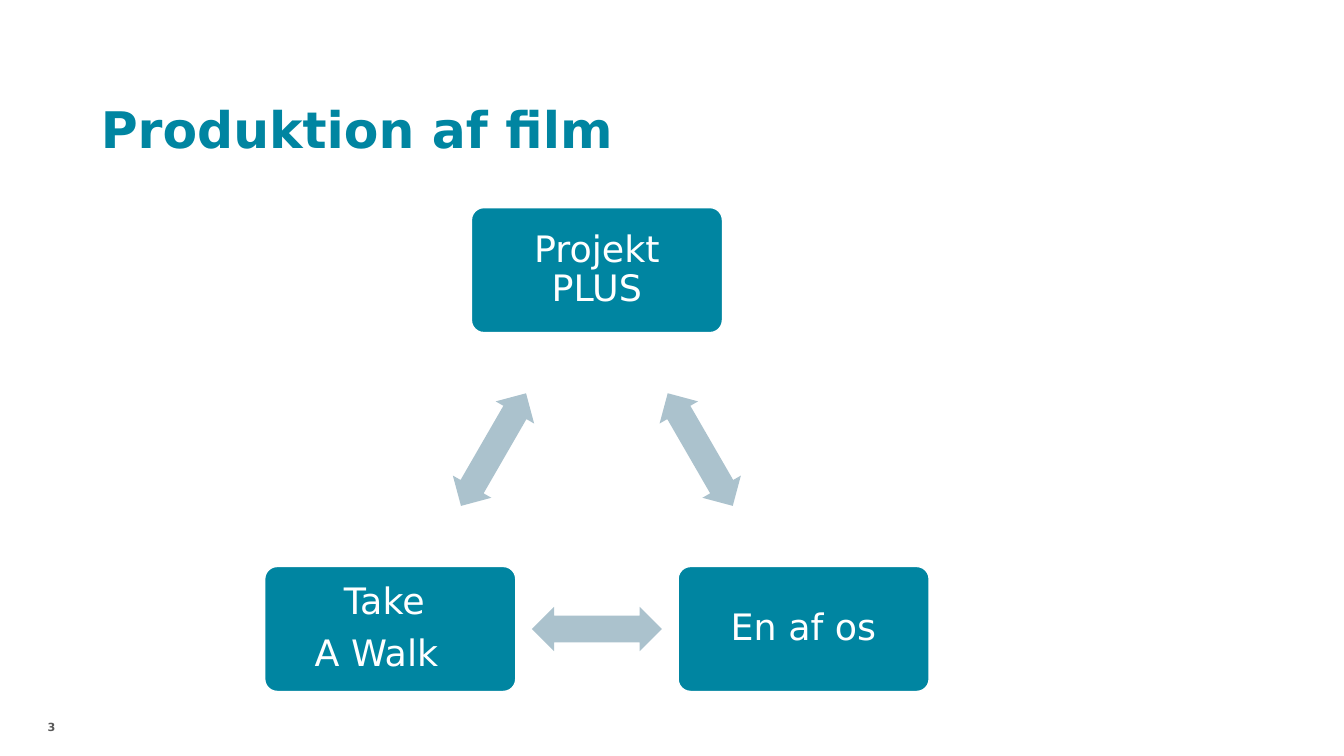
from dataclasses import dataclass

from pptx import Presentation
from pptx.dml.color import RGBColor
from pptx.enum.shapes import MSO_SHAPE
from pptx.enum.text import MSO_ANCHOR, PP_ALIGN
from pptx.util import Inches, Pt

ROUNDED, DOUBLE_ARROW = MSO_SHAPE.ROUNDED_RECTANGLE, MSO_SHAPE.LEFT_RIGHT_ARROW
TOP, MIDDLE, BOTTOM = MSO_ANCHOR.TOP, MSO_ANCHOR.MIDDLE, MSO_ANCHOR.BOTTOM
LEFT, CENTER, RIGHT = PP_ALIGN.LEFT, PP_ALIGN.CENTER, PP_ALIGN.RIGHT


@dataclass(frozen=True)
class Theme:
    font: str = "DejaVu Sans"
    teal: RGBColor = RGBColor(0x00, 0x85, 0xA1)
    arrow: RGBColor = RGBColor(0xAB, 0xC2, 0xCD)
    white: RGBColor = RGBColor(0xFF, 0xFF, 0xFF)
    grey: RGBColor = RGBColor(0x59, 0x59, 0x59)
    title_size: int = 36
    node_size: int = 26
    number_size: int = 8


THEME = Theme()
NODE_SIZE = (2.49, 1.24)
ARROW_SIZE = (1.29, 0.44)
CENTER_X, HALF_BASE = 5.92, 2.05
APEX_Y, BASE_Y = 2.68, 6.24


def write(sp, lines, size, color, align, anchor, inset=0, bold=False,
          spacing=1.0, after=0):
    tf = sp.text_frame
    tf.word_wrap = True
    tf.vertical_anchor = anchor
    tf.margin_left = tf.margin_right = Inches(inset)
    tf.margin_top = tf.margin_bottom = Inches(inset)
    for i, line in enumerate(lines):
        p = tf.paragraphs[0] if i == 0 else tf.add_paragraph()
        p.alignment = align
        p.line_spacing = spacing
        p.space_after = Pt(after)
        r = p.add_run()
        r.text = line
        r.font.name = THEME.font
        r.font.size = Pt(size)
        r.font.bold = bold
        r.font.color.rgb = color


def add_label(slide, box, text, size, color, align, anchor, spacing=1.0):
    sp = slide.shapes.add_textbox(*map(Inches, box))
    write(sp, [text], size, color, align, anchor, bold=True, spacing=spacing)


def add_centered(slide, kind, center, size, fill):
    """Add a filled preset shape around its centre point."""
    (x, y), (w, h) = center, size
    sp = slide.shapes.add_shape(kind, Inches(x - w / 2), Inches(y - h / 2),
                                Inches(w), Inches(h))
    sp.shadow.inherit = False
    sp.fill.solid()
    sp.fill.fore_color.rgb = fill
    return sp


def add_node(slide, center, lines):
    sp = add_centered(slide, ROUNDED, center, NODE_SIZE, THEME.teal)
    sp.adjustments[0] = 0.1
    sp.line.color.rgb = THEME.white
    sp.line.width = Pt(1)
    write(sp, lines, THEME.node_size, THEME.white, CENTER, MIDDLE,
          inset=0.11, spacing=0.9, after=9)


def add_arrow(slide, start, end, rotation):
    """Add a double arrow halfway between two nodes."""
    middle = [(a + b) / 2 for a, b in zip(start, end)]
    sp = add_centered(slide, DOUBLE_ARROW, middle, ARROW_SIZE, THEME.arrow)
    sp.adjustments[0] = 0.6
    sp.adjustments[1] = 0.5
    sp.line.fill.background()
    sp.rotation = rotation


def add_cycle(slide):
    nodes = [
        ((CENTER_X, APEX_Y), ["Projekt PLUS"]),
        ((CENTER_X + HALF_BASE, BASE_Y), ["En af os"]),
        ((CENTER_X - HALF_BASE, BASE_Y), ["Take ", "A Walk\t"]),
    ]
    for i, (center, lines) in enumerate(nodes):
        add_node(slide, center, lines)
        following = nodes[(i + 1) % len(nodes)][0]
        add_arrow(slide, center, following, 60 + 120 * i)


def main():
    prs = Presentation()
    prs.slide_width, prs.slide_height = Inches(13.33), Inches(7.5)
    slide = prs.slides.add_slide(prs.slide_layouts[6])
    add_label(slide, (1, 0.4, 10.55, 1.18), "Produktion af film",
              THEME.title_size, THEME.teal, LEFT, BOTTOM, spacing=0.9)
    add_cycle(slide)
    add_label(slide, (0.16, 7.15, 0.39, 0.35), "3",
              THEME.number_size, THEME.grey, RIGHT, TOP)
    prs.save("out.pptx")


if __name__ == "__main__":
    main()
